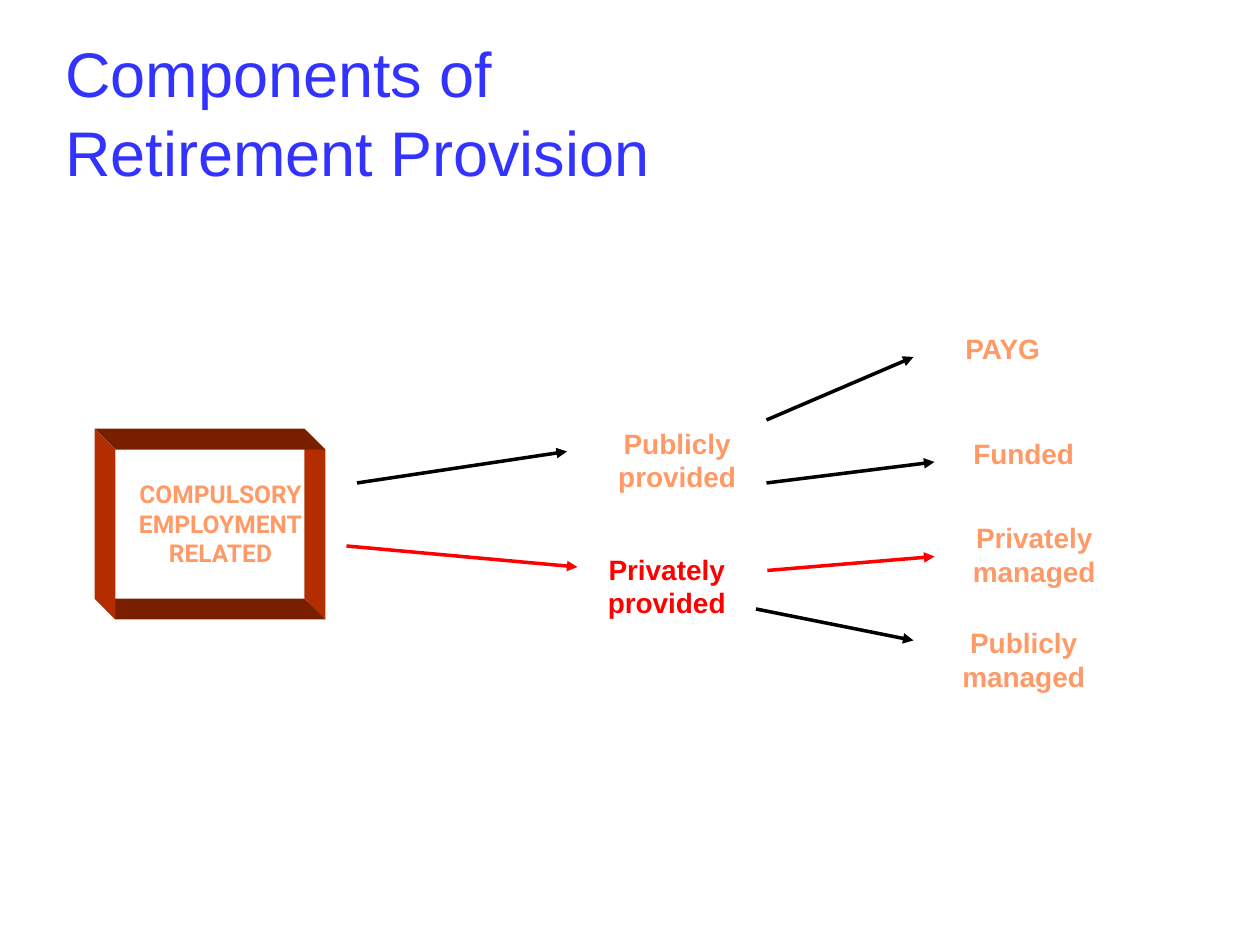
import pptx
import pptx.dml.color
import pptx.enum.shapes
import pptx.enum.text
import pptx.oxml
import pptx.oxml.ns
import pptx.util

Pt = pptx.util.Pt
ALIGN = pptx.enum.text.PP_ALIGN
ANCHOR = pptx.enum.text.MSO_ANCHOR
FIT = pptx.enum.text.MSO_AUTO_SIZE

BLUE, ORANGE, RED, BLACK = "3333FF", "FF9966", "FF0000", "000000"
RUST, DARK_RUST = "B32D00", "7A1E00"


def colour(value):
    return pptx.dml.color.RGBColor.from_string(value)


def apply(target, values):
    for name, value in values.items():
        setattr(target, name, value)


class Diagram:
    """Holds the style and the current page."""

    label_font = {"name": "Arial", "size": Pt(16), "bold": True}
    frame_font = {"name": "Roboto", "size": Pt(14), "bold": True}
    title_font = {"name": "Arial", "size": Pt(36), "bold": False}
    label_width = 138

    def __init__(self, page):
        self.page = page

    def fill_text(self, box, lines, font, ink, para_format, frame_format):
        apply(box.text_frame, {"word_wrap": True, **frame_format})
        box.text_frame.text = "\n".join(lines)
        for para in box.text_frame.paragraphs:
            apply(para, para_format)
            for span in para.runs:
                apply(span.font, font)
                span.font.color.rgb = colour(ink)

    def title(self, text, left, top, width, height):
        box = self.page.shapes.title
        apply(box, {"left": Pt(left), "top": Pt(top),
                    "width": Pt(width), "height": Pt(height)})
        self.fill_text(box, [text], self.title_font, BLUE,
                       {"alignment": ALIGN.LEFT, "line_spacing": 1.05},
                       {"vertical_anchor": ANCHOR.MIDDLE, "auto_size": FIT.NONE})

    def label(self, text, left, top, height, ink=ORANGE):
        box = self.page.shapes.add_textbox(
            Pt(left), Pt(top), Pt(self.label_width), Pt(height))
        self.fill_text(box, [text], self.label_font, ink,
                       {"alignment": ALIGN.CENTER},
                       {"auto_size": FIT.SHAPE_TO_FIT_TEXT})

    def face(self, corners, fill):
        builder = self.page.shapes.build_freeform(
            *(Pt(value) for value in corners[0]), scale=1.0)
        builder.add_line_segments(
            [(Pt(x), Pt(y)) for x, y in corners[1:]], close=True)
        shape = builder.convert_to_shape()
        shape.shadow.inherit = False
        shape.fill.solid()
        shape.fill.fore_color.rgb = colour(fill)
        shape.line.fill.background()

    def frame(self, lines, left, top, width, height, depth):
        # Corners clockwise from top left; the back is up and to the left
        right, bottom = left + width, top + height
        front = [(left, top), (right, top), (right, bottom), (left, bottom)]
        back = [(x - depth, y - depth) for x, y in front]
        for side, fill in ((1, RUST), (2, DARK_RUST), (0, DARK_RUST), (3, RUST)):
            after = (side + 1) % 4
            self.face([back[side], back[after], front[after], front[side]], fill)
        box = self.page.shapes.add_shape(
            pptx.enum.shapes.MSO_SHAPE.RECTANGLE,
            Pt(left), Pt(top), Pt(width), Pt(height))
        box.shadow.inherit = False
        box.fill.background()
        box.line.fill.background()
        self.fill_text(box, lines, self.frame_font, ORANGE,
                       {"alignment": ALIGN.CENTER},
                       {"vertical_anchor": ANCHOR.TOP, "margin_top": Pt(17),
                        "margin_left": Pt(1), "margin_right": Pt(1),
                        "margin_bottom": Pt(1)})

    def arrow(self, start, end, ink=BLACK):
        line = self.page.shapes.add_connector(
            pptx.enum.shapes.MSO_CONNECTOR.STRAIGHT,
            *(Pt(value) for value in start + end))
        line.line.color.rgb = colour(ink)
        line.line.width = Pt(0)
        qn = pptx.oxml.ns.qn
        properties = line.element.find(qn("p:spPr"))
        outline = properties.find(qn("a:ln"))
        outline.append(self.element("tailEnd", 'type="triangle"'))
        properties.append(self.element("effectLst"))

    def element(self, tag, attributes=""):
        namespace = pptx.oxml.ns.nsdecls("a")
        return pptx.oxml.parse_xml(f"<a:{tag} {namespace} {attributes}/>")


def main():
    deck = pptx.Presentation()
    apply(deck, {"slide_width": Pt(720), "slide_height": Pt(540)})
    diagram = Diagram(deck.slides.add_slide(deck.slide_layouts[5]))

    diagram.title("Components of \vRetirement Provision", 30, 18, 492, 90)

    # Starting point
    diagram.frame(["COMPULSORY", "EMPLOYMENT", "RELATED"], 66, 257, 120, 97, 12)

    # Who provides, then how it is funded or managed
    one_line, two_lines = 27, 46
    for label in (
        ("Publicly provided", 318, 240, two_lines),
        ("Privately provided", 312, 312, two_lines, RED),
        ("PAYG", 504, 186, one_line),
        ("Funded", 516, 246, one_line),
        ("Privately managed", 522, 294, two_lines),
        ("Publicly managed", 516, 354, two_lines),
    ):
        diagram.label(*label)

    # Arrows, with the private route in red
    for arrow in (
        ((204, 276), (324, 258)),
        ((198, 312), (330, 324), RED),
        ((438, 240), (522, 204)),
        ((438, 276), (534, 264)),
        ((438.5, 326), (534, 318), RED),
        ((432, 348), (522, 366)),
    ):
        diagram.arrow(*arrow)

    deck.save("out.pptx")


if __name__ == "__main__":
    main()
